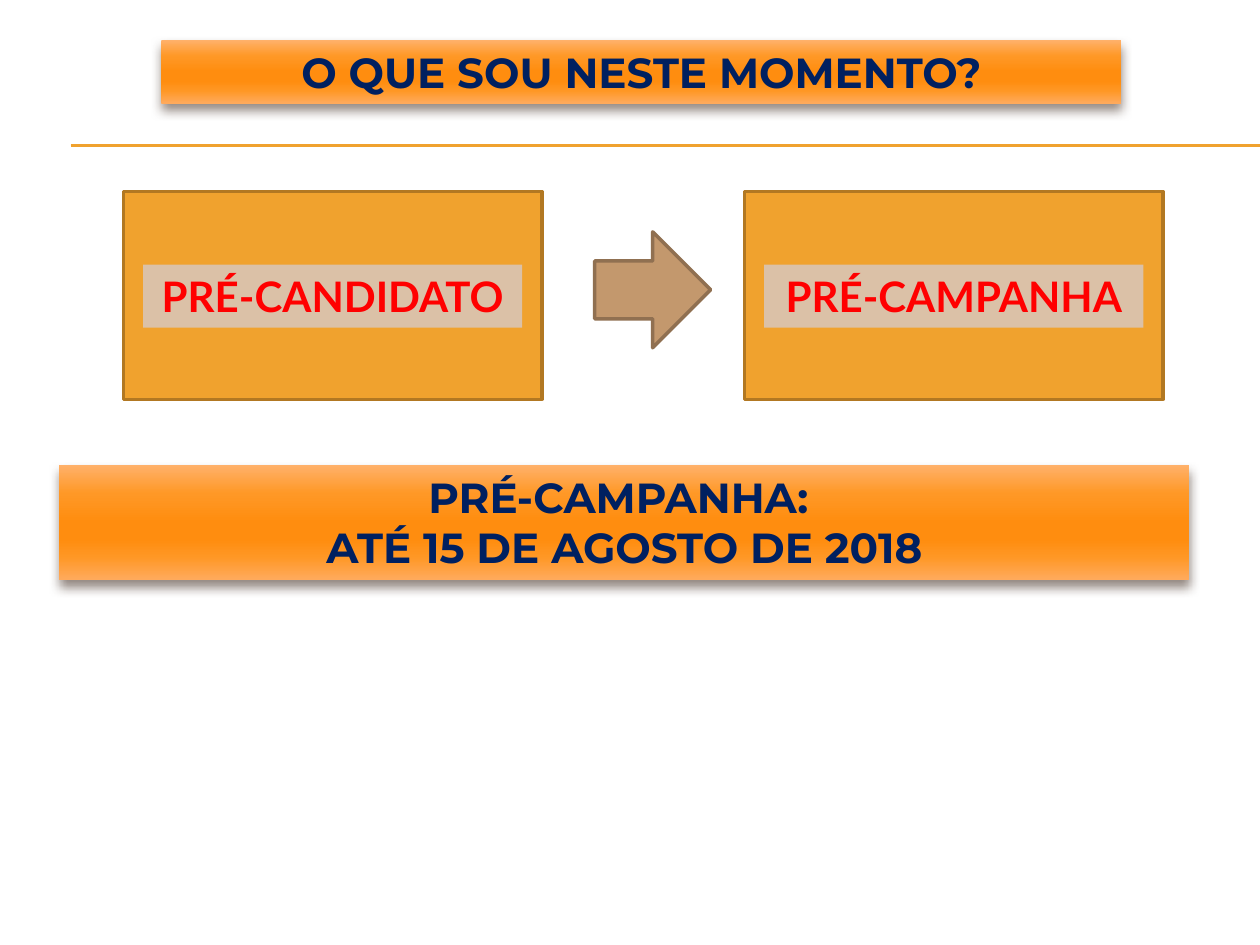
from dataclasses import dataclass

from lxml.etree import SubElement
from pptx import Presentation
from pptx.dml.color import RGBColor
from pptx.enum.shapes import MSO_CONNECTOR as Connector, MSO_SHAPE as Preset
from pptx.enum.text import MSO_ANCHOR as Anchor, MSO_AUTO_SIZE as AutoSize, PP_ALIGN as Align
from pptx.oxml.ns import qn
from pptx.util import Inches, Pt


@dataclass(frozen=True)
class Theme:
    """Colours, fonts and sizes of the slide."""
    amber: str = "F0A22E"
    amber_edge: str = "B27822"
    label: str = "DBC1A7"
    arrow: str = "C3986D"
    arrow_edge: str = "907051"
    red: str = "FF0000"
    navy: str = "002060"
    shadow: str = "4E3B30"
    glow: tuple = ((0, "FFB16A"), (25, "FF9826"), (50, "FF8D0F"),
                   (65, "FF8D0F"), (80, "FF9724"), (100, "FFAA5C"))
    label_font: str = "Lato"
    banner_font: str = "Montserrat"
    text_size: int = 24
    edge_width: float = 2
    rule_width: float = 0.75


THEME = Theme()


def rgb(value):
    """Turn a hex string into a colour."""
    return RGBColor.from_string(value)


def add_rule(page, top):
    """Draw a thin line from the left margin to the slide's right edge."""
    rule = page.shapes.add_connector(
        Connector.STRAIGHT, Inches(0.56), Inches(top), Inches(10), Inches(top))
    rule.line.color.rgb = rgb(THEME.amber)
    rule.line.width = Pt(THEME.rule_width)
    SubElement(rule._element.spPr, qn("a:effectLst"))


def add_figure(page, preset, area, fill, edge):
    """Add a flat outlined preset shape."""
    figure = page.shapes.add_shape(preset, *map(Inches, area))
    figure.shadow.inherit = False
    figure.fill.solid()
    figure.fill.fore_color.rgb = rgb(fill)
    figure.line.color.rgb = rgb(edge)
    figure.line.width = Pt(THEME.edge_width)


def add_text(page, area, lines, font, color):
    """Add a text box with centred bold lines."""
    box = page.shapes.add_textbox(*map(Inches, area))
    frame = box.text_frame
    frame.word_wrap = True
    frame.auto_size = AutoSize.SHAPE_TO_FIT_TEXT
    frame.vertical_anchor = Anchor.TOP
    for index, line in enumerate(lines):
        para = frame.add_paragraph() if index else frame.paragraphs[0]
        para.alignment = Align.CENTER
        span = para.add_run()
        span.text = line
        span.font.name = font
        span.font.size = Pt(THEME.text_size)
        span.font.bold = True
        span.font.color.rgb = rgb(color)
    return box


def add_color(parent, value):
    """Append a colour element to an XML parent."""
    return SubElement(parent, qn("a:srgbClr"), val=value)


def add_banner(page, area, lines):
    """Add a glowing orange banner with a soft shadow."""
    box = add_text(page, area, lines, THEME.banner_font, THEME.navy)
    box.fill.gradient()
    box.fill.gradient_angle = 270
    properties = box._element.spPr
    stops = properties.find(qn("a:gradFill")).find(qn("a:gsLst"))
    for stop in list(stops):
        stops.remove(stop)
    for position, value in THEME.glow:
        add_color(SubElement(stops, qn("a:gs"), pos=str(position * 1000)), value)
    box.shadow.inherit = False
    shadow = SubElement(
        properties.find(qn("a:effectLst")), qn("a:outerShdw"), blurRad=str(Pt(6)),
        dist=str(Pt(4)), dir="5400000", algn="ctr", rotWithShape="0")
    SubElement(add_color(shadow, THEME.shadow), qn("a:alpha"), val="60000")


def add_card(page, left, label):
    """Add an amber card with a label across its middle."""
    add_figure(page, Preset.RECTANGLE, (left, 1.52, 3.32, 1.65),
               THEME.amber, THEME.amber_edge)
    box = add_text(page, (left + 0.155, 2.1, 3.01, 0.5), [label],
                   THEME.label_font, THEME.red)
    box.fill.solid()
    box.fill.fore_color.rgb = rgb(THEME.label)


def main():
    """Build the slide and save the deck."""
    deck = Presentation()
    deck.slide_width, deck.slide_height = Inches(10), Inches(7.5)
    page = deck.slides.add_slide(deck.slide_layouts[6])
    for top in (1.15, 1.16):
        add_rule(page, top)
    for left, label in ((0.98, "PRÉ-CANDIDATO"), (5.91, "PRÉ-CAMPANHA")):
        add_card(page, left, label)
    add_figure(page, Preset.RIGHT_ARROW, (4.72, 1.84, 0.92, 0.92),
               THEME.arrow, THEME.arrow_edge)
    add_banner(page, (0.47, 3.69, 8.97, 0.91),
               ["PRÉ-CAMPANHA: ", "ATÉ 15 DE AGOSTO DE 2018"])
    add_banner(page, (1.28, 0.32, 7.62, 0.5), ["O QUE SOU NESTE MOMENTO?"])
    deck.save("out.pptx")


if __name__ == "__main__":
    main()
